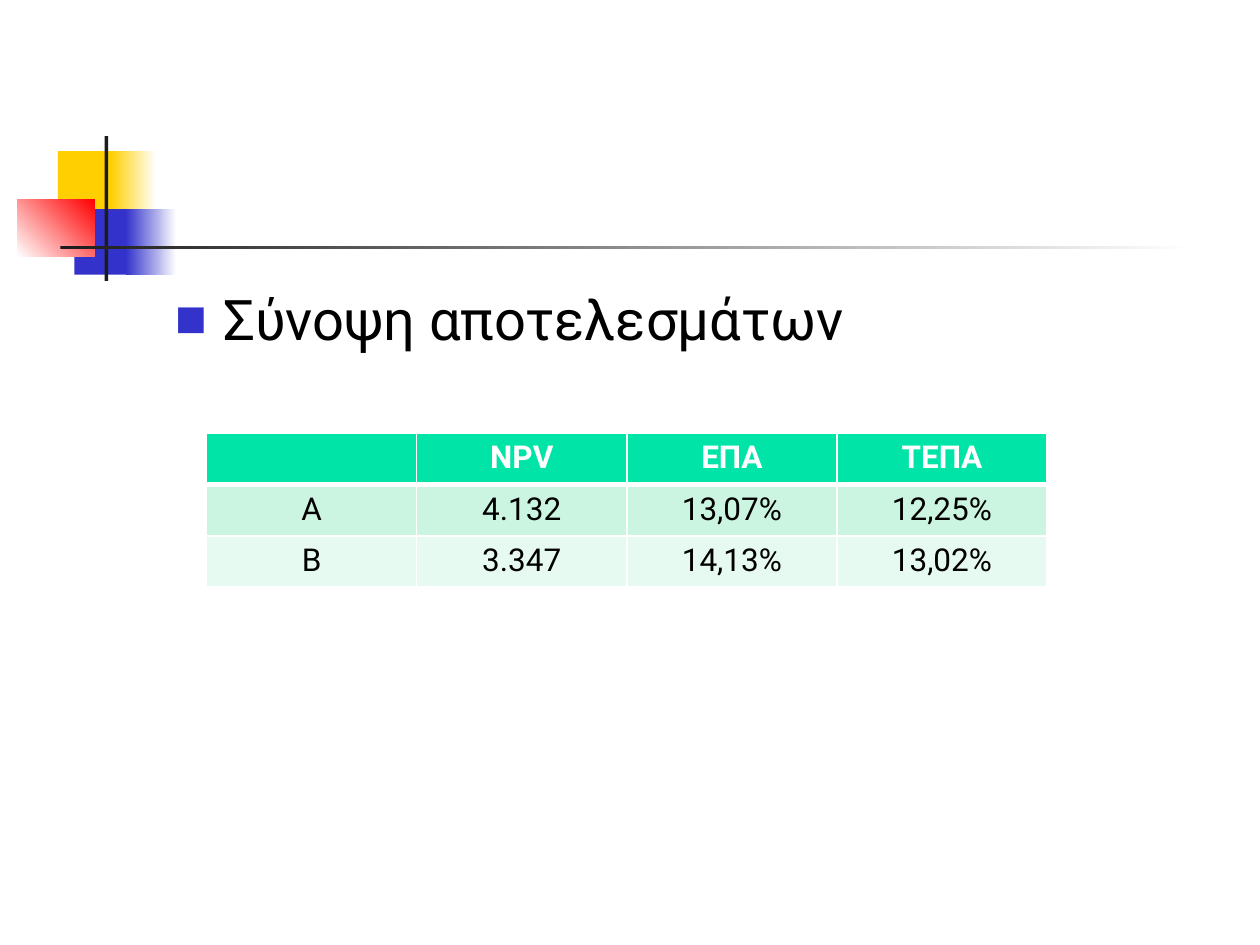
from lxml import etree
from pptx import Presentation
from pptx.dml.color import RGBColor
from pptx.enum import shapes, text
from pptx.oxml import ns
from pptx.util import Inches, Pt

FONT = "Roboto"
WHITE = RGBColor(0xFF, 0xFF, 0xFF)
BLACK = RGBColor(0, 0, 0)
YELLOW = RGBColor(0xFF, 0xCF, 0x01)
BLUE = RGBColor(0x33, 0x33, 0xCC)
RED = RGBColor(0xFF, 0, 0)
DARK = RGBColor(0x1C, 0x1C, 0x1C)
HEADER = RGBColor(0x00, 0xE4, 0xA8)
BANDS = [RGBColor(0xCC, 0xF5, 0xE1), RGBColor(0xE7, 0xFA, 0xF1)]

HEADING = "Σύνοψη αποτελεσμάτων"
RESULTS = [
    ["", "NPV", "ΕΠΑ", "ΤΕΠΑ"],
    ["Α", "4.132", "13,07%", "12,25%"],
    ["Β", "3.347", "14,13%", "13,02%"],
]
ORNAMENT = [
    ((0.46, 1.2, 0.48, 0.52), [YELLOW], 0),
    ((0.88, 1.2, 0.36, 0.52), [YELLOW, WHITE], 0),
    ((0.59, 1.66, 0.46, 0.52), [BLUE], 0),
    ((1, 1.66, 0.4, 0.52), [BLUE, WHITE], 0),
    ((0.14, 1.58, 0.61, 0.46), [WHITE, RED], 45),
    ((0.83, 1.08, 0.03, 1.15), [DARK], 0),
    ((0.48, 1.95, 9, 0.03), [DARK, WHITE], 0),
]


def add_text(p, content, size=18, color=BLACK, bold=False, align=None):
    p.alignment = align
    r = p.add_run()
    r.text = content
    r.font.name, r.font.size, r.font.bold = FONT, Pt(size), bold
    r.font.color.rgb = color


def add_block(s, box, colors, angle):
    sp = s.shapes.add_shape(shapes.MSO_SHAPE.RECTANGLE, *map(Inches, box))
    sp.shadow.inherit = False
    sp.line.fill.background()
    if len(colors) == 1:
        sp.fill.solid()
        sp.fill.fore_color.rgb = colors[0]
        return
    sp.fill.gradient()
    sp.fill.gradient_angle = angle
    for stop, color in zip(sp.fill.gradient_stops, colors):
        stop.color.rgb = color


def add_bullet(p, char, color, percent):
    pPr = p._p.get_or_add_pPr()
    pPr.set("marL", str(Inches(0.38)))
    pPr.set("indent", str(-Inches(0.38)))
    clr = etree.SubElement(pPr, ns.qn("a:buClr"))
    etree.SubElement(clr, ns.qn("a:srgbClr"), val=str(color))
    etree.SubElement(pPr, ns.qn("a:buSzPct"), val=str(percent * 1000))
    etree.SubElement(pPr, ns.qn("a:buFont"), typeface=FONT)
    etree.SubElement(pPr, ns.qn("a:buChar"), char=char)


def set_borders(cell, widths):
    tcPr = cell._tc.get_or_add_tcPr()
    for i, (side, width) in enumerate(zip(("lnL", "lnR", "lnT", "lnB"), widths)):
        ln = etree.Element(ns.qn(f"a:{side}"), w=str(Pt(width)))
        fill = etree.SubElement(ln, ns.qn("a:solidFill"))
        etree.SubElement(fill, ns.qn("a:srgbClr"), val=str(WHITE))
        tcPr.insert(i, ln)


def add_results(s):
    tbl = s.shapes.add_table(len(RESULTS), len(RESULTS[0]), Inches(1.64),
                             Inches(3.44), Inches(6.67), Inches(1.22)).table
    for i, row in enumerate(RESULTS):
        for j, value in enumerate(row):
            cell = tbl.cell(i, j)
            cell.fill.solid()
            cell.fill.fore_color.rgb = BANDS[(i - 1) % 2] if i else HEADER
            set_borders(cell, (1, 1, 3 if i == 1 else 1, 1 if i else 3))
            add_text(cell.text_frame.paragraphs[0], value, bold=i == 0,
                     color=BLACK if i else WHITE, align=text.PP_ALIGN.CENTER)


def main():
    prs = Presentation()
    prs.slide_width, prs.slide_height = Inches(10), Inches(7.5)
    s = prs.slides.add_slide(prs.slide_layouts[1])
    title = s.shapes.title
    title.element.getparent().remove(title.element)
    for block in ORNAMENT:
        add_block(s, *block)
    body = s.placeholders[1]
    body.left, body.top, body.width, body.height = map(Inches, (1.29, 2.21, 8.5, 4.5))
    p = body.text_frame.paragraphs[0]
    p.space_before = Pt(0)
    add_bullet(p, "■", BLUE, 60)
    add_text(p, HEADING, size=32)
    add_results(s)
    prs.save("out.pptx")


if __name__ == "__main__":
    main()
